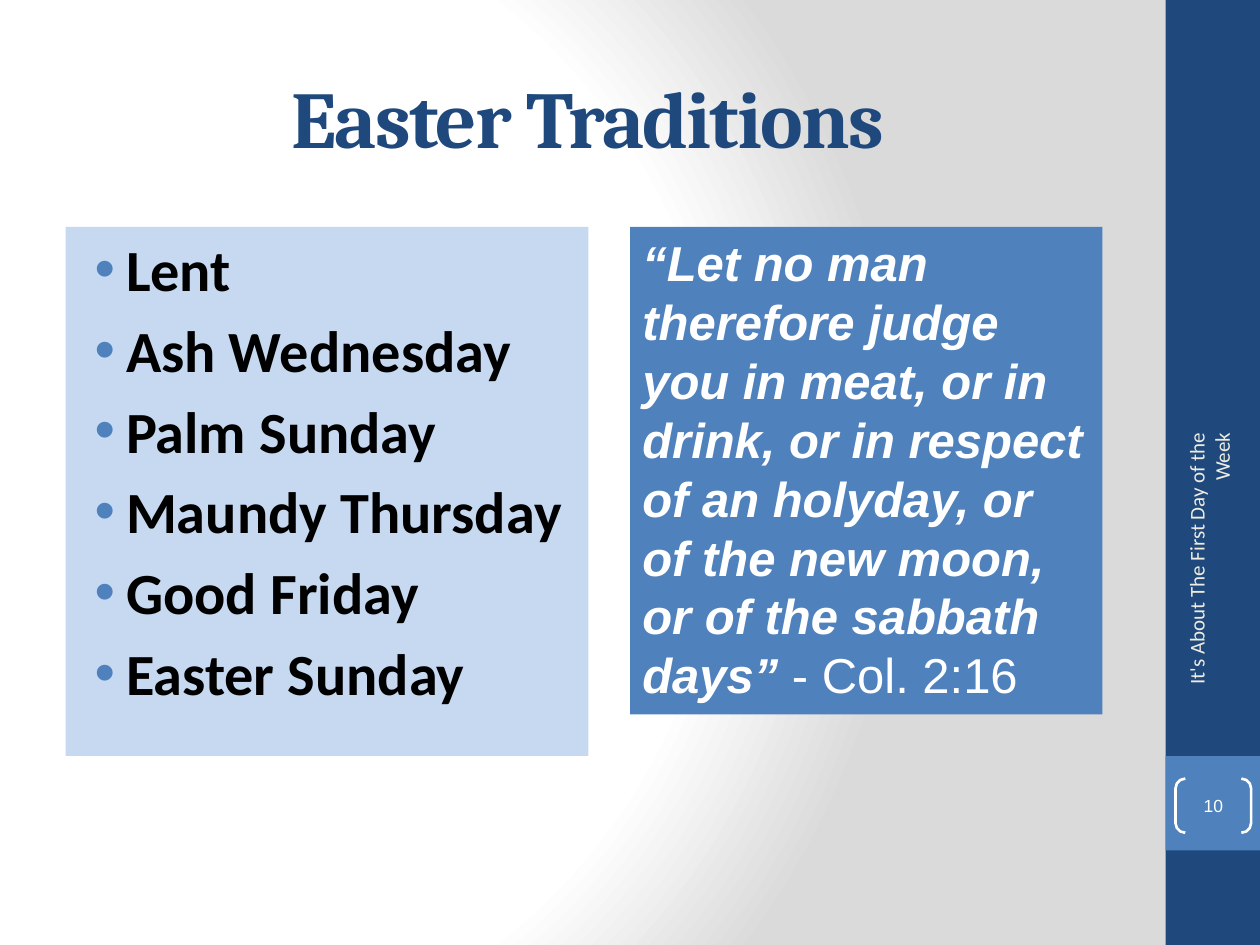
from lxml.etree import SubElement, fromstring
from pptx import Presentation
from pptx.dml.color import RGBColor
from pptx.enum.shapes import MSO_SHAPE as Preset
from pptx.enum.text import MSO_ANCHOR as Anchor, MSO_AUTO_SIZE as AutoSize, PP_ALIGN as Align
from pptx.oxml.ns import nsdecls, qn
from pptx.util import Inches, Pt

TITLE = "Easter Traditions"
TRADITIONS = ["Lent", "Ash Wednesday", "Palm Sunday", "Maundy Thursday", "Good Friday", "Easter Sunday"]
QUOTE = ("“Let no man therefore judge you in meat, or in drink, or in respect of an holyday, "
         "or of the new moon, or of the sabbath days” ")
CITATION = "- Col. 2:16"
FOOTER = "It's About The First Day of the Week"
PAGE = "10"

COLORS = {"navy": "1F497D", "blue": "4F81BD", "pale": "C6D9F1", "white": "FFFFFF",
          "black": "000000", "cream": "EEECE1", "gray": "DADADA"}
BACKGROUND_STOPS = [(0, "white"), (75, "white"), (100, "gray")]

WIDTH, HEIGHT = 10, 7.5
BAND = 0.75
BAND_LEFT = WIDTH - BAND
PANEL_TOP = 1.8
PAGE_TOP = HEIGHT * 0.8


def color(name):
    return RGBColor.from_string(COLORS[name])


def place(shape, left, top, width, height):
    shape.left, shape.top = Inches(left), Inches(top)
    shape.width, shape.height = Inches(width), Inches(height)


def add_box(slide, box, fill=None, preset=Preset.RECTANGLE):
    shape = slide.shapes.add_shape(preset, *map(Inches, box))
    shape.shadow.inherit = False
    shape.line.fill.background()
    if fill:
        shape.fill.solid()
        shape.fill.fore_color.rgb = color(fill)
    else:
        shape.fill.background()
    return shape


def style(run, font, size, fill, bold=False, italic=False):
    run.font.name, run.font.size = font, Pt(size)
    run.font.bold, run.font.italic = bold, italic
    run.font.color.rgb = color(fill)


def set_frame(shape, anchor):
    frame = shape.text_frame
    frame.word_wrap = True
    frame.auto_size = AutoSize.NONE
    frame.vertical_anchor = anchor
    return frame


def set_line(shape, text, align, *font):
    frame = set_frame(shape, Anchor.MIDDLE)
    frame.text = text
    paragraph = frame.paragraphs[0]
    paragraph.alignment = align
    style(paragraph.runs[0], *font)
    return paragraph.runs[0]


def set_background(slide):
    slide.background.fill.solid()
    stops = "".join(f'<a:gs pos="{position * 1000}"><a:srgbClr val="{COLORS[name]}"/></a:gs>'
                    for position, name in BACKGROUND_STOPS)
    gradient = fromstring(
        f'<a:gradFill {nsdecls("a")} rotWithShape="1"><a:gsLst>{stops}</a:gsLst><a:path path="circle">'
        '<a:fillToRect l="20000" t="50000" r="100000" b="50000"/></a:path></a:gradFill>')
    solid = next(slide.element.iter(qn("a:solidFill")))
    solid.getparent().replace(solid, gradient)


def add_side_band(slide):
    add_box(slide, (BAND_LEFT, 0, BAND, HEIGHT), "navy")
    add_box(slide, (BAND_LEFT, PAGE_TOP, BAND, BAND), "blue")
    brackets = add_box(slide, (9.33, 6.18, 0.6, 0.43), preset=Preset.DOUBLE_BRACKET)
    brackets.adjustments[0] = 0.18
    brackets.line.color.rgb = color("white")
    brackets.line.width = Pt(1.5)
    set_line(brackets, PAGE, Align.CENTER, "Arial", 10, "white")
    frame = brackets.text_frame
    frame.margin_left = frame.margin_right = frame.margin_top = frame.margin_bottom = 0
    footer = slide.shapes.add_textbox(*map(Inches, (8.3, 4.43, 2.59, 0.4)))
    footer.rotation = 270
    set_line(footer, FOOTER, Align.RIGHT, "Calibri", 12, "cream")


def add_title(slide):
    title = slide.shapes.title
    place(title, 0.5, 0.3, 8.33, 1.25)
    run = set_line(title, TITLE, Align.CENTER, "Cambria", 46, "navy", True)
    run.font._element.set("spc", "-100")


def add_traditions(slide):
    body = slide.placeholders[1]
    place(body, 0.52, PANEL_TOP, 4.15, 4.2)
    body.fill.solid()
    body.fill.fore_color.rgb = color("pale")
    frame = set_frame(body, Anchor.TOP)
    frame.text = "\n".join(TRADITIONS)
    for paragraph in frame.paragraphs:
        paragraph.space_before = Pt(6.2)
        style(paragraph.runs[0], "Calibri", 33.3, "black", True)
        properties = paragraph._p.get_or_add_pPr()
        properties.set("marL", str(Inches(0.38)))
        properties.set("indent", str(Inches(-0.25)))
        bullet_color = SubElement(properties, qn("a:buClr"))
        SubElement(bullet_color, qn("a:srgbClr"), val=COLORS["blue"])
        SubElement(properties, qn("a:buFont"), typeface="Arial")
        SubElement(properties, qn("a:buChar"), char="•")


def add_quote(slide):
    panel = add_box(slide, (5, PANEL_TOP, 3.75, 3.87), "blue")
    paragraph = set_frame(panel, Anchor.TOP).paragraphs[0]
    paragraph.alignment = Align.LEFT
    for text, emphasis in [(QUOTE, True), (CITATION, False)]:
        run = paragraph.add_run()
        run.text = text
        style(run, "Arial", 28, "white", emphasis, emphasis)


def main():
    presentation = Presentation()
    presentation.slide_width, presentation.slide_height = Inches(WIDTH), Inches(HEIGHT)
    slide = presentation.slides.add_slide(presentation.slide_layouts[1])
    set_background(slide)
    add_side_band(slide)
    add_title(slide)
    add_traditions(slide)
    add_quote(slide)
    presentation.save("out.pptx")


if __name__ == "__main__":
    main()
